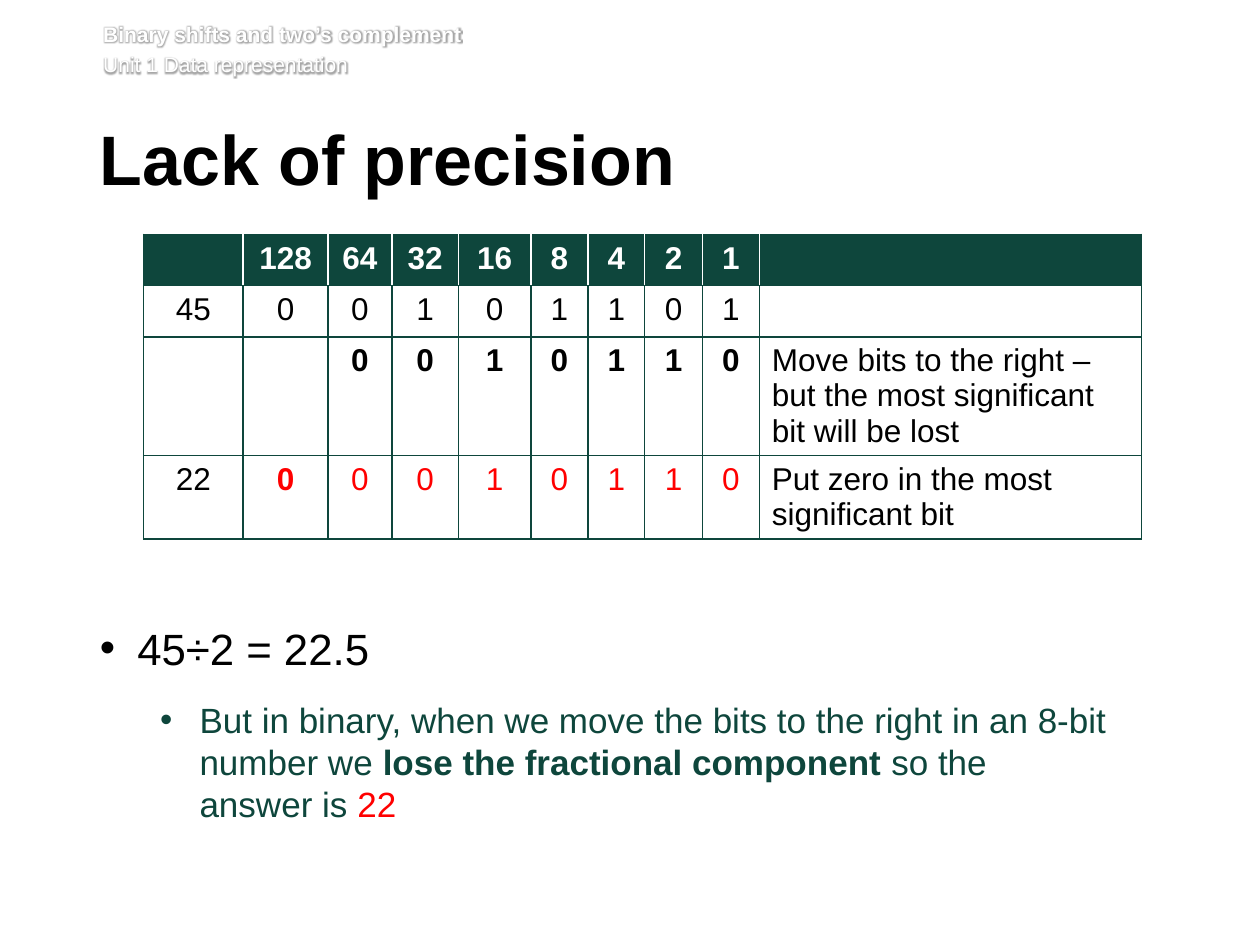
"""Build the slide on lost precision in binary right shifts."""
from dataclasses import dataclass

from lxml import etree
from pptx import Presentation
from pptx.dml.color import RGBColor
from pptx.enum import text as t
from pptx.oxml import ns
from pptx.util import Pt

GREEN, WHITE, BLACK, RED = "0E463C", "FFFFFF", "000000", "FF0000"
FONT = "Arial"


@dataclass
class Row:
    height: float
    cells: list[str]
    color: str = BLACK
    bold: bool = False
    header: bool = False


@dataclass
class Bullet:
    runs: list[tuple[str, bool, str]]
    size: float
    color: str
    level: int
    left: float
    hang: float
    line: float
    after: float


COLUMNS = [57, 48.5, 36.5, 38, 41.5, 32.5, 32.5, 33, 32.5, 218.5]
ROWS = [
    Row(29.25, ["", "128", "64", "32", "16", "8", "4", "2", "1", ""], WHITE, True, True),
    Row(29.25, ["45", *"00101101", ""]),
    Row(68, ["", "", *"0010110",
             "Move bits to the right – but the most significant bit will be lost"], BLACK, True),
    Row(47.5, ["22", *"00010110", "Put zero in the most significant bit"], RED),
]
BULLETS = [
    Bullet([("45÷2 = 22.5", False, BLACK)], 25, BLACK, 0, 21.5, 21.5, 29, 14),
    Bullet([("But in binary, when we move the bits to the right in an 8-bit number we ", False, GREEN),
            ("lose the fractional component ", True, GREEN),
            ("so the \nanswer is ", False, GREEN),
            ("22", False, RED)], 20, GREEN, 1, 57, 22.5, 24, 12),
]


def rgb(color: str) -> RGBColor:
    return RGBColor.from_string(color)


def add_xml(parent, tag: str, **attrs: str):
    return etree.SubElement(parent, ns.qn(tag), attrs)


def style(font, size: float, color: str, bold: bool = False) -> None:
    font.name, font.size, font.bold = FONT, Pt(size), bold
    font.color.rgb = rgb(color)


def place(sp, left: float, top: float, width: float, height: float) -> None:
    sp.left, sp.top, sp.width, sp.height = map(Pt, (left, top, width, height))


def setup_frame(tf, insets: tuple[float, ...], anchor) -> None:
    tf.margin_left, tf.margin_top, tf.margin_right, tf.margin_bottom = map(Pt, insets)
    tf.word_wrap, tf.auto_size = True, t.MSO_AUTO_SIZE.NONE
    tf.vertical_anchor = anchor


def add_header(s, lines: list[tuple[str, bool]]) -> None:
    sp = s.shapes.add_textbox(Pt(59), Pt(12.25), Pt(635), Pt(35.25))
    tf = sp.text_frame
    setup_frame(tf, (0, 0, 0, 3.6), t.MSO_ANCHOR.BOTTOM)
    for i, (words, bold) in enumerate(lines):
        p = tf.add_paragraph() if i else tf.paragraphs[0]
        p.space_before = Pt(2.9 if i else 0)
        r = p.add_run()
        r.text = words
        style(p.font, 12, WHITE, bold)
        effects = add_xml(r._r.get_or_add_rPr(), "a:effectLst")
        glow = add_xml(effects, "a:glow", rad=str(Pt(3)))
        add_xml(add_xml(glow, "a:srgbClr", val=BLACK), "a:alpha", val="35000")


def fill_title(sp, words: str) -> None:
    place(sp, 57, 71.25, 615.5, 52.5)
    setup_frame(sp.text_frame, (0, 3.6, 7.2, 3.6), t.MSO_ANCHOR.TOP)
    p = sp.text_frame.paragraphs[0]
    p.add_run().text = words
    p.alignment, p.line_spacing = t.PP_ALIGN.LEFT, Pt(39)
    style(p.font, 40, BLACK, True)


def add_bullet(p, item: Bullet) -> None:
    p.level, p.alignment = item.level, t.PP_ALIGN.LEFT
    p.line_spacing, p.space_before, p.space_after = Pt(item.line), Pt(0), Pt(item.after)
    pPr = p._p.get_or_add_pPr()
    pPr.set("marL", str(Pt(item.left)))
    pPr.set("indent", str(-Pt(item.hang)))
    add_xml(pPr, "a:buFont", typeface=FONT)
    add_xml(pPr, "a:buChar", char="•")
    style(p.font, item.size, item.color)
    for words, bold, color in item.runs:
        for i, part in enumerate(words.split("\n")):
            if i:
                p.add_line_break()
            r = p.add_run()
            r.text = part
            if bold:
                r.font.bold = True
            if color != item.color:
                r.font.color.rgb = rgb(color)


def fill_body(sp, items: list[Bullet]) -> None:
    place(sp, 57, 356, 614, 130)
    tf = sp.text_frame
    setup_frame(tf, (0, 0, 7.2, 3.6), t.MSO_ANCHOR.TOP)
    for i, item in enumerate(items):
        add_bullet(tf.add_paragraph() if i else tf.paragraphs[0], item)


def set_borders(cell, left: str, right: str) -> None:
    tcPr = cell._tc.get_or_add_tcPr()
    for side, color in zip("LRTB", (left, right, GREEN, GREEN)):
        line = add_xml(tcPr, f"a:ln{side}", w=str(Pt(1)))
        add_xml(add_xml(line, "a:solidFill"), "a:srgbClr", val=color)


def add_bit_table(s, rows: list[Row], widths: list[float]) -> None:
    last = len(widths) - 1
    table = s.shapes.add_table(len(rows), len(widths), Pt(82), Pt(134), Pt(sum(widths)),
                               Pt(sum(row.height for row in rows))).table
    table.first_row = table.horz_banding = False
    for column, width in zip(table.columns, widths):
        column.width = Pt(width)
    for i, row in enumerate(rows):
        table.rows[i].height = Pt(row.height)
        for j, words in enumerate(row.cells):
            cell = table.cell(i, j)
            inner = WHITE if row.header else GREEN
            set_borders(cell, inner if j else GREEN, inner if j < last else GREEN)
            if row.header:
                cell.fill.solid()
                cell.fill.fore_color.rgb = rgb(GREEN)
            else:
                cell.fill.background()
            p = cell.text_frame.paragraphs[0]
            if words:
                p.add_run().text = words
            is_bit = 0 < j < last
            p.alignment = t.PP_ALIGN.LEFT if j == last else t.PP_ALIGN.CENTER
            new_zero = row.color == RED and j == 1
            style(p.font, 18, row.color if is_bit else BLACK, is_bit and (row.bold or new_zero))


def main() -> None:
    prs = Presentation()
    prs.slide_width, prs.slide_height = Pt(720), Pt(540)
    s = prs.slides.add_slide(prs.slide_layouts[1])
    add_header(s, [("Binary shifts and two’s complement", True),
                   ("Unit 1 Data representation", False)])
    fill_title(s.shapes.title, "Lack of precision")
    fill_body(s.placeholders[1], BULLETS)
    add_bit_table(s, ROWS, COLUMNS)
    prs.save("out.pptx")


if __name__ == "__main__":
    main()
